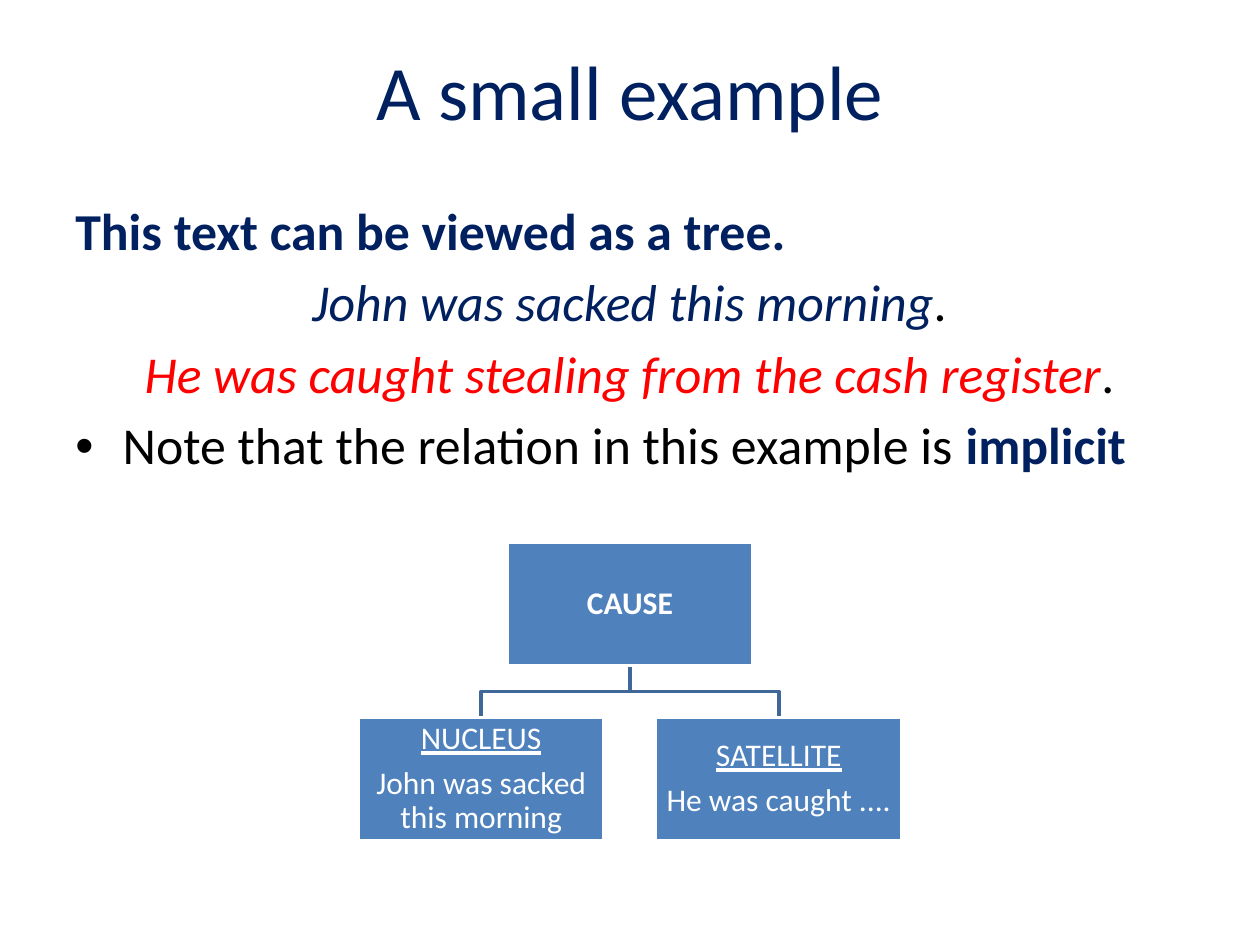
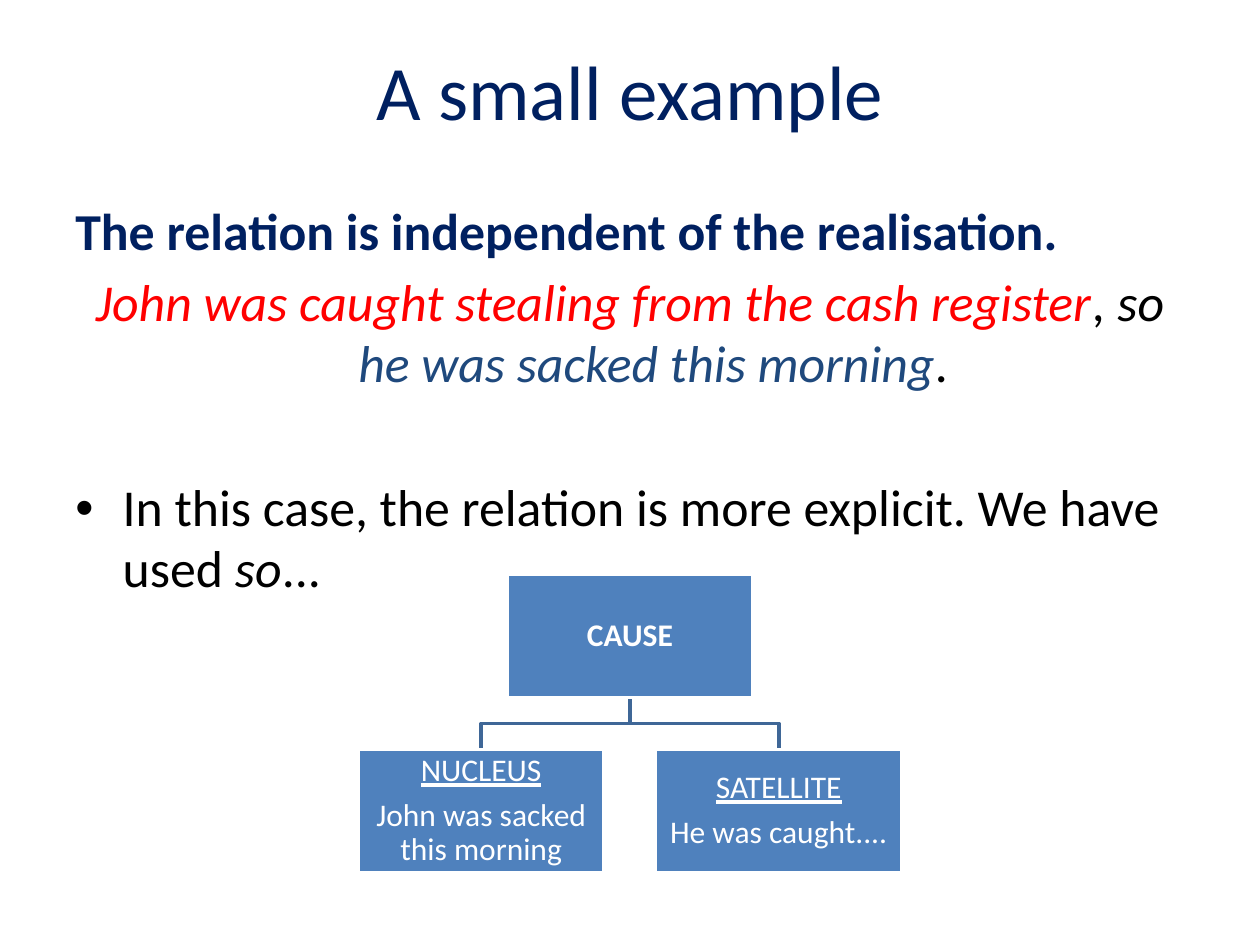
"""Builds two slides that show a sentence pair as a small relation tree."""
import pptx
import pptx.dml.color
import pptx.enum.shapes
import pptx.enum.text
import pptx.oxml.ns
import pptx.util
from lxml import etree

Pt = pptx.util.Pt
ALIGN = pptx.enum.text.PP_ALIGN
ANCHOR = pptx.enum.text.MSO_ANCHOR

FONT = "Calibri"
NAVY, BLUE, RED, BLACK, WHITE = "002060", "1F497D", "FF0000", "000000", "FFFFFF"
BOX_FILL, BRANCH_COLOUR = "4F81BD", "3F6797"

TITLE = "A small example"
LEFT, CENTRE = ALIGN.LEFT, ALIGN.CENTER
BODY_SIZE, BODY_GAP, BLANK_GAP, HANGING = 29.6, 6, 47.4, 27

NUCLEUS = ("NUCLEUS", "John was sacked this morning")

SLIDES = [
    {
        "body": [
            {"spans": [("This text can be viewed as a tree.", {"colour": NAVY, "bold": True})]},
            {"align": CENTRE, "spans": [
                ("John was sacked this morning", {"colour": NAVY, "italic": True}),
                (".", {"italic": True})]},
            {"align": CENTRE, "spans": [
                ("He was caught stealing from the cash register", {"colour": RED, "italic": True}),
                (".", {"italic": True})]},
            {"bullet": True, "spans": [
                ("Note that the relation in this example is ", {}),
                ("implicit", {"colour": NAVY, "bold": True})]},
        ],
        "body_height": 199,
        "tree_top": 310,
        "children": [NUCLEUS, ("SATELLITE", "He was caught ....")],
    },
    {
        "body": [
            {"spans": [("The relation is independent of the realisation.",
                        {"colour": NAVY, "bold": True})]},
            {"align": CENTRE, "spans": [
                ("John was caught stealing from the cash register", {"colour": RED, "italic": True}),
                (", so ", {"italic": True}),
                ("he was sacked this morning", {"colour": BLUE, "italic": True}),
                (".", {"italic": True})]},
            {"bullet": True, "before": BLANK_GAP, "spans": [
                ("In this case, the relation is more explicit. We have used ", {}),
                ("so", {"italic": True}),
                ("...", {})]},
        ],
        "body_height": 212,
        "tree_top": 328.3,
        "children": [NUCLEUS, ("SATELLITE", "He was caught....")],
    },
]

SLIDE_WIDTH, SLIDE_HEIGHT = 720, 540
MARGIN = 36
TITLE_TOP, TITLE_HEIGHT, BODY_TOP = 6, 90, 111.6
BOX_WIDTH, BOX_HEIGHT = 140.6, 70.3
LEVEL_STEP, CHILD_OFFSET = 100, 85
NODE_INSET = 0.72


def rgb(colour):
    return pptx.dml.color.RGBColor.from_string(colour)


def add_span(para, text, size=BODY_SIZE, colour=BLACK, bold=False, italic=False, underline=False):
    span = para.add_run()
    span.text = text
    font = span.font
    font.name, font.size, font.color.rgb = FONT, Pt(size), rgb(colour)
    font.bold, font.italic, font.underline = bold, italic, underline


def paragraphs(frame, items):
    for index, item in enumerate(items):
        yield (frame.add_paragraph() if index else frame.paragraphs[0]), item


def add_text_box(page, top, height):
    box = page.shapes.add_textbox(Pt(MARGIN), Pt(top), Pt(SLIDE_WIDTH - 2 * MARGIN), Pt(height))
    box.text_frame.word_wrap = True
    return box.text_frame


def add_title(page):
    frame = add_text_box(page, TITLE_TOP, TITLE_HEIGHT)
    frame.vertical_anchor = ANCHOR.MIDDLE
    para = frame.paragraphs[0]
    para.alignment = CENTRE
    add_span(para, TITLE, size=44, colour=NAVY)


def add_body(page, body, height):
    frame = add_text_box(page, BODY_TOP, height)
    for para, item in paragraphs(frame, body):
        para.alignment = item.get("align", LEFT)
        para.space_before = Pt(item.get("before", BODY_GAP))
        para.line_spacing = 0.98
        properties = para._p.get_or_add_pPr()
        properties.set("marL", str(Pt(HANGING)))
        properties.set("indent", str(-Pt(HANGING)))
        if item.get("bullet"):
            font = etree.SubElement(properties, pptx.oxml.ns.qn("a:buFont"))
            font.set("typeface", "Arial")
            etree.SubElement(properties, pptx.oxml.ns.qn("a:buChar")).set("char", "•")
        for text, style in item["spans"]:
            add_span(para, text, **style)


def add_branch(page, parent_x, child_x, top, bottom):
    middle = (top + bottom) / 2
    builder = page.shapes.build_freeform(Pt(parent_x), Pt(top))
    corners = [(parent_x, middle), (child_x, middle), (child_x, bottom)]
    builder.add_line_segments([(Pt(x), Pt(y)) for x, y in corners], close=False)
    branch = builder.convert_to_shape()
    branch.shadow.inherit = False
    branch.fill.background()
    branch.line.color.rgb = rgb(BRANCH_COLOUR)
    branch.line.width = Pt(2)


def add_node(page, centre_x, top, lines):
    node = page.shapes.add_shape(
        pptx.enum.shapes.MSO_SHAPE.RECTANGLE,
        Pt(centre_x - BOX_WIDTH / 2), Pt(top), Pt(BOX_WIDTH), Pt(BOX_HEIGHT))
    node.shadow.inherit = False
    node.fill.solid()
    node.fill.fore_color.rgb = rgb(BOX_FILL)
    node.line.color.rgb = rgb(WHITE)
    node.line.width = Pt(2)
    frame = node.text_frame
    frame.word_wrap = True
    frame.vertical_anchor = ANCHOR.MIDDLE
    frame.margin_left = frame.margin_right = Pt(NODE_INSET)
    frame.margin_top = frame.margin_bottom = Pt(NODE_INSET)
    for para, (text, style) in paragraphs(frame, lines):
        para.alignment = CENTRE
        para.line_spacing = 0.9
        para.space_after = Pt(6.3)
        add_span(para, text, size=18, colour=WHITE, **style)


def add_tree(page, top, children):
    root_x = SLIDE_WIDTH / 2
    child_top = top + LEVEL_STEP
    child_centres = [root_x - CHILD_OFFSET, root_x + CHILD_OFFSET]
    for child_x in reversed(child_centres):
        add_branch(page, root_x, child_x, top + BOX_HEIGHT, child_top)
    add_node(page, root_x, top, [("CAUSE", {"bold": True})])
    for child_x, (role, sentence) in zip(child_centres, children):
        add_node(page, child_x, child_top, [(role, {"underline": True}), (sentence, {})])


def main():
    deck = pptx.Presentation()
    deck.slide_width, deck.slide_height = Pt(SLIDE_WIDTH), Pt(SLIDE_HEIGHT)
    for content in SLIDES:
        page = deck.slides.add_slide(deck.slide_layouts[6])
        add_title(page)
        add_body(page, content["body"], content["body_height"])
        add_tree(page, content["tree_top"], content["children"])
    deck.save("out.pptx")


if __name__ == "__main__":
    main()
